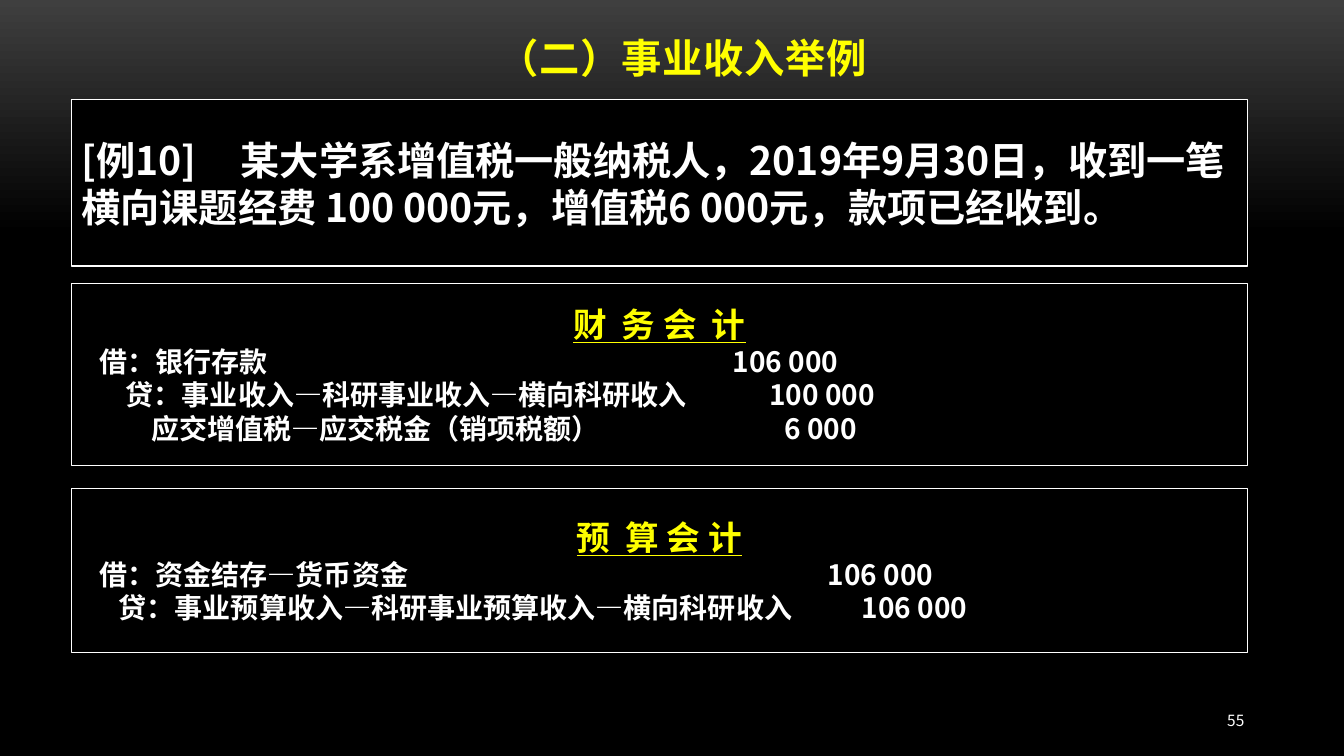
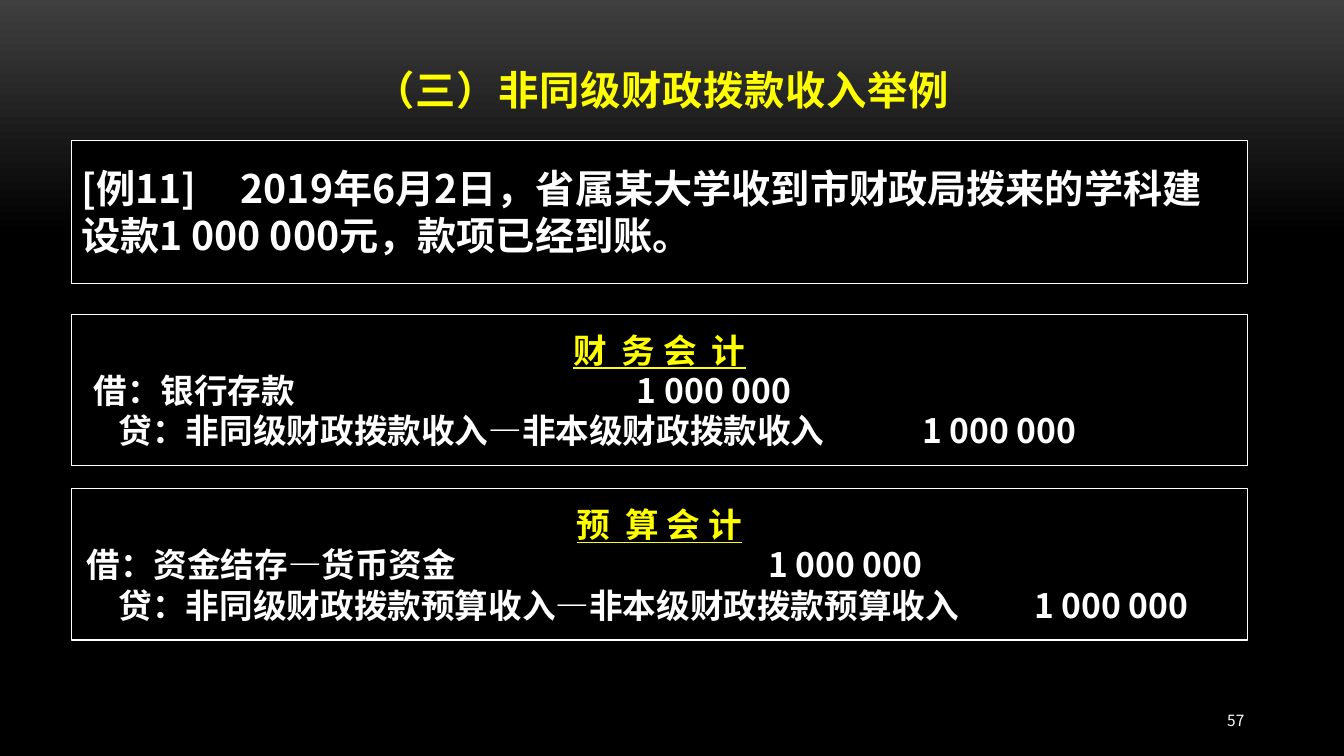
from copy import deepcopy

from lxml.etree import SubElement
from pptx import Presentation
from pptx.dml.color import RGBColor
from pptx.enum.shapes import MSO_SHAPE
from pptx.enum.text import MSO_ANCHOR, MSO_AUTO_SIZE, PP_ALIGN
from pptx.oxml.ns import qn
from pptx.util import Inches, Pt

FONT = "Noto Sans CJK SC"
COLORS = {"top": "3F3F3F", "black": "000000", "white": "FFFFFF", "yellow": "FFFF00"}
LEFT, WIDE = 0.71, 11.66
CASE_TAB = 1.58
FIN, BUD = "财  务 会  计", "预  算 会 计"

# Places are (left, top) for titles and (top, height) for boxes.
# An entry is (indent, account, amount position, amount).
SLIDES = [
    {
        "title": "（二）事业收入举例", "place": (1.84, 0.28), "page": "55",
        "case": ("[例10]", "某大学系增值税一般纳税人，2019年9月30日，收到一笔横向课题经费 "
                 "100 000元，增值税6 000元，款项已经收到。"),
        "case_at": (0.99, 1.65), "size": 20,
        "books": [
            (FIN, (2.81, 1.81), [
                (0.18, "借：银行存款", 6.46, "106 000"),
                (0.44, "贷：事业收入—科研事业收入—横向科研收入", 6.82, "100 000"),
                (0.69, "应交增值税—应交税金（销项税额）", 6.97, "6 000")]),
            (BUD, (4.85, 1.62), [
                (0.18, "借：资金结存—货币资金", 7.4, "106 000"),
                (0.37, "贷：事业预算收入―科研事业预算收入—横向科研收入", 7.74, "106 000")]),
        ],
    },
    {
        "title": "（三）非同级财政拨款收入举例", "place": (1.63, 0.6), "page": "57",
        "case": ("[例11]", "2019年6月2日，省属某大学收到市财政局拨来的学科建设款"
                 "1 000 000元，款项已经到账。"),
        "case_at": (1.39, 1.42), "size": 24,
        "books": [
            (FIN, (3.12, 1.5), [
                (0.12, "借：银行存款", 5.51, "1 000 000"),
                (0.37, "贷：非同级财政拨款收入—非本级财政拨款收入", 8.34, "1 000 000")]),
            (BUD, (4.85, 1.5), [
                (0.05, "借：资金结存—货币资金", 6.81, "1 000 000"),
                (0.37, "贷：非同级财政拨款预算收入—非本级财政拨款预算收入", 9.45, "1 000 000")]),
        ],
    },
]


def rgb(name):
    return RGBColor.from_string(COLORS[name])


def write(par, text, size, color="white", bold=True, align=PP_ALIGN.LEFT, tabs=()):
    """Fill a paragraph with one run, with tab stops in inches."""
    props = par._p.get_or_add_pPr()
    if tabs:
        stops = SubElement(props, qn("a:tabLst"))
        for pos in tabs:
            SubElement(stops, qn("a:tab"), pos=str(Inches(pos)), algn="l")
    par.alignment = align
    par.line_spacing = Pt(size * 1.2)
    run = par.add_run()
    run.text = text
    font = run.font
    font.name, font.size, font.bold = FONT, Pt(size), bold
    font.color.rgb = rgb(color)
    SubElement(run._r.get_or_add_rPr(), qn("a:ea"), typeface=FONT)
    return run


def paint(master):
    """Give all slides the dark gradient."""
    fill = master.background.fill
    fill.gradient()
    fill.gradient_angle = 270
    first, last = fill.gradient_stops
    first.color.rgb, first.position = rgb("top"), 0
    last.color.rgb, last.position = rgb("black"), 0.31
    end = deepcopy(last._gs)
    end.set("pos", "100000")
    last._gs.addnext(end)


def add_box(slide, top, height):
    box = slide.shapes.add_shape(MSO_SHAPE.RECTANGLE, Inches(LEFT), Inches(top),
                                 Inches(WIDE), Inches(height))
    box.shadow.inherit = False
    box.fill.solid()
    box.fill.fore_color.rgb = rgb("black")
    box.line.color.rgb = rgb("white")
    box.line.width = Pt(0.85)
    frame = box.text_frame
    frame.word_wrap = True
    frame.vertical_anchor = MSO_ANCHOR.MIDDLE
    return frame


def add_title(slide, text, left, top):
    title = slide.shapes.title
    title.left, title.top = Inches(left), Inches(top)
    title.width, title.height = Inches(9.87), Inches(0.55)
    frame = title.text_frame
    frame.auto_size = MSO_AUTO_SIZE.NONE
    frame.vertical_anchor = MSO_ANCHOR.BOTTOM
    frame.margin_bottom = Inches(0.02)
    run = write(frame.paragraphs[0], text, 28.8, "yellow", align=PP_ALIGN.CENTER)
    run._r.get_or_add_rPr().set("spc", "50")


def add_book(slide, name, place, rows, size):
    frame = add_box(slide, *place)
    head = write(frame.paragraphs[0], name, 24, "yellow", align=PP_ALIGN.CENTER)
    head.font.underline = True
    for indent, account, stop, amount in rows:
        write(frame.add_paragraph(), f"\t{account}\t{amount}", size, tabs=(indent, stop))


def add_page(slide, number):
    box = slide.shapes.add_textbox(Inches(11), Inches(6.95), Inches(1.44), Inches(0.4))
    frame = box.text_frame
    frame.word_wrap = True
    frame.vertical_anchor = MSO_ANCHOR.MIDDLE
    write(frame.paragraphs[0], number, 11, bold=False, align=PP_ALIGN.RIGHT)


def main():
    deck = Presentation()
    deck.slide_width, deck.slide_height = Inches(13.33), Inches(7.5)
    paint(deck.slide_master)
    for data in SLIDES:
        slide = deck.slides.add_slide(deck.slide_layouts[5])
        add_title(slide, data["title"], *data["place"])
        case = add_box(slide, *data["case_at"])
        write(case.paragraphs[0], "\t".join(data["case"]), 28, tabs=(CASE_TAB,))
        for book in data["books"]:
            add_book(slide, *book, data["size"])
        add_page(slide, data["page"])
    deck.save("out.pptx")


if __name__ == "__main__":
    main()
